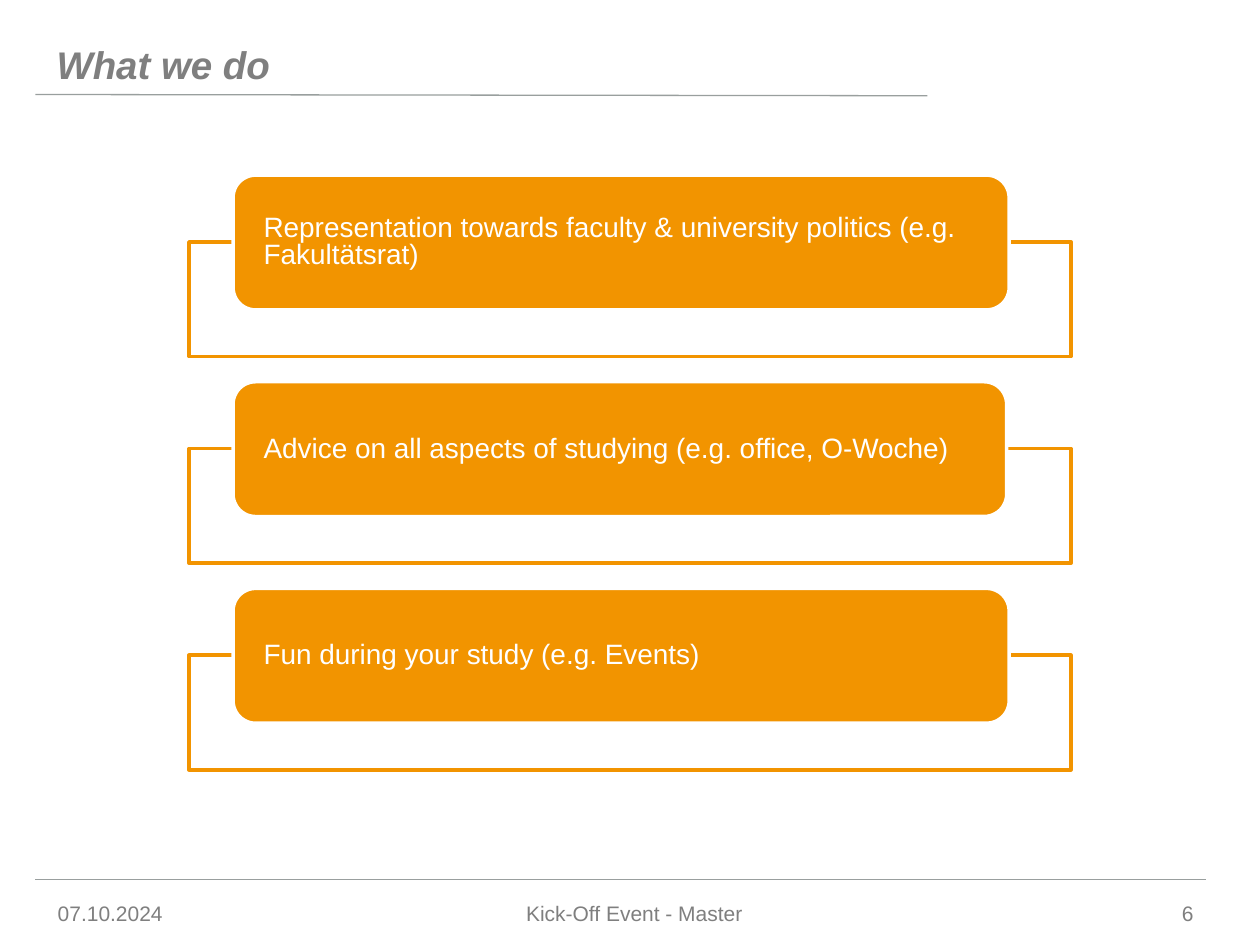
from dataclasses import dataclass

from lxml.etree import SubElement
from pptx import Presentation
from pptx.dml.color import RGBColor
from pptx.enum.shapes import MSO_CONNECTOR, MSO_SHAPE
from pptx.enum.text import MSO_ANCHOR, PP_ALIGN
from pptx.oxml.ns import qn
from pptx.slide import Slide
from pptx.text.text import TextFrame
from pptx.util import Inches, Pt

COLORS = {"orange": "F29400", "white": "FFFFFF", "gray": "7F7F7F", "rule": "999F9E"}
FONT = "Arial"

FIRST_FRAME_TOP = 1.92
ROW_PITCH = 1.64
FRAME_LEFT, FRAME_WIDTH, FRAME_HEIGHT = 1.5, 7, 0.91
CARD_LEFT, CARD_HEIGHT, CARD_RISE = 1.85, 1.07, 0.53


@dataclass
class Activity:
    text: str
    card_width: float
    line_spacing: float


@dataclass
class Label:
    text: str
    left: float
    top: float
    width: float
    height: float
    size: int = 12
    alignment: PP_ALIGN = PP_ALIGN.LEFT
    anchor: MSO_ANCHOR = MSO_ANCHOR.MIDDLE
    emphasis: bool = False


@dataclass
class Rule:
    start: tuple[float, float]
    end: tuple[float, float]


ACTIVITIES = [
    Activity("Representation towards faculty & university politics (e.g. Fakultätsrat)", 6.16, 0.8),
    Activity("Advice on all aspects of studying (e.g. office, O-Woche)", 6.14, 0.9),
    Activity("Fun during your study (e.g. Events)", 6.16, 0.9),
]
LABELS = [
    Label("What we do", 0.35, 0.19, 7.08, 0.55, 22, anchor=MSO_ANCHOR.BOTTOM, emphasis=True),
    Label("07.10.2024", 0.36, 7.05, 1.18, 0.39),
    Label("Kick-Off Event - Master", 1.61, 7.05, 6.85, 0.39, alignment=PP_ALIGN.CENTER),
    Label("6", 8.98, 7.05, 0.59, 0.39, alignment=PP_ALIGN.RIGHT),
]
RULES = [Rule((0.28, 6.98), (9.57, 6.98)), Rule((0.28, 0.75), (7.36, 0.76))]


def color(name: str) -> RGBColor:
    return RGBColor.from_string(COLORS[name])


def write_text(text_frame: TextFrame, text: str, size: int, color_name: str,
               alignment: PP_ALIGN, anchor: MSO_ANCHOR, emphasis: bool = False) -> None:
    text_frame.text = text
    text_frame.word_wrap = True
    text_frame.vertical_anchor = anchor
    paragraph = text_frame.paragraphs[0]
    paragraph.alignment = alignment
    font = paragraph.runs[0].font
    font.name = FONT
    font.size = Pt(size)
    font.bold = font.italic = emphasis
    font.color.rgb = color(color_name)


def add_rule(slide: Slide, rule: Rule) -> None:
    points = [Inches(value) for value in (*rule.start, *rule.end)]
    connector = slide.shapes.add_connector(MSO_CONNECTOR.STRAIGHT, *points)
    connector.line.color.rgb = color("rule")
    connector.line.width = Pt(0.75)
    SubElement(connector._element.spPr, qn("a:effectLst"))


def add_label(slide: Slide, label: Label) -> None:
    box = slide.shapes.add_textbox(Inches(label.left), Inches(label.top),
                                   Inches(label.width), Inches(label.height))
    write_text(box.text_frame, label.text, label.size, "gray",
               label.alignment, label.anchor, label.emphasis)


def add_box(slide: Slide, kind: MSO_SHAPE, left: float, top: float, width: float,
            height: float, fill: str, outline: str):
    shape = slide.shapes.add_shape(kind, Inches(left), Inches(top),
                                   Inches(width), Inches(height))
    shape.shadow.inherit = False
    shape.fill.solid()
    shape.fill.fore_color.rgb = color(fill)
    shape.line.color.rgb = color(outline)
    shape.line.width = Pt(2)
    return shape


def add_activity(slide: Slide, activity: Activity, frame_top: float) -> None:
    """Draw an outlined frame with a filled card centred on its top edge."""
    frame = add_box(slide, MSO_SHAPE.RECTANGLE, FRAME_LEFT, frame_top,
                    FRAME_WIDTH, FRAME_HEIGHT, "white", "orange")
    frame_color = frame._element.spPr.find(qn("a:solidFill"))[0]
    SubElement(frame_color, qn("a:alpha"), val="90000")

    card = add_box(slide, MSO_SHAPE.ROUNDED_RECTANGLE, CARD_LEFT, frame_top - CARD_RISE,
                   activity.card_width, CARD_HEIGHT, "orange", "white")
    text_frame = card.text_frame
    write_text(text_frame, activity.text, 16, "white", PP_ALIGN.LEFT, MSO_ANCHOR.MIDDLE)
    text_frame.margin_left = text_frame.margin_right = Inches(0.19)
    text_frame.margin_top = text_frame.margin_bottom = 0
    text_frame.paragraphs[0].line_spacing = activity.line_spacing


def main() -> None:
    presentation = Presentation()
    presentation.slide_width = Inches(10)
    presentation.slide_height = Inches(7.5)
    slide = presentation.slides.add_slide(presentation.slide_layouts[6])
    for rule in RULES:
        add_rule(slide, rule)
    for label in LABELS:
        add_label(slide, label)
    for row, activity in enumerate(ACTIVITIES):
        add_activity(slide, activity, FIRST_FRAME_TOP + row * ROW_PITCH)
    presentation.save("out.pptx")


if __name__ == "__main__":
    main()
